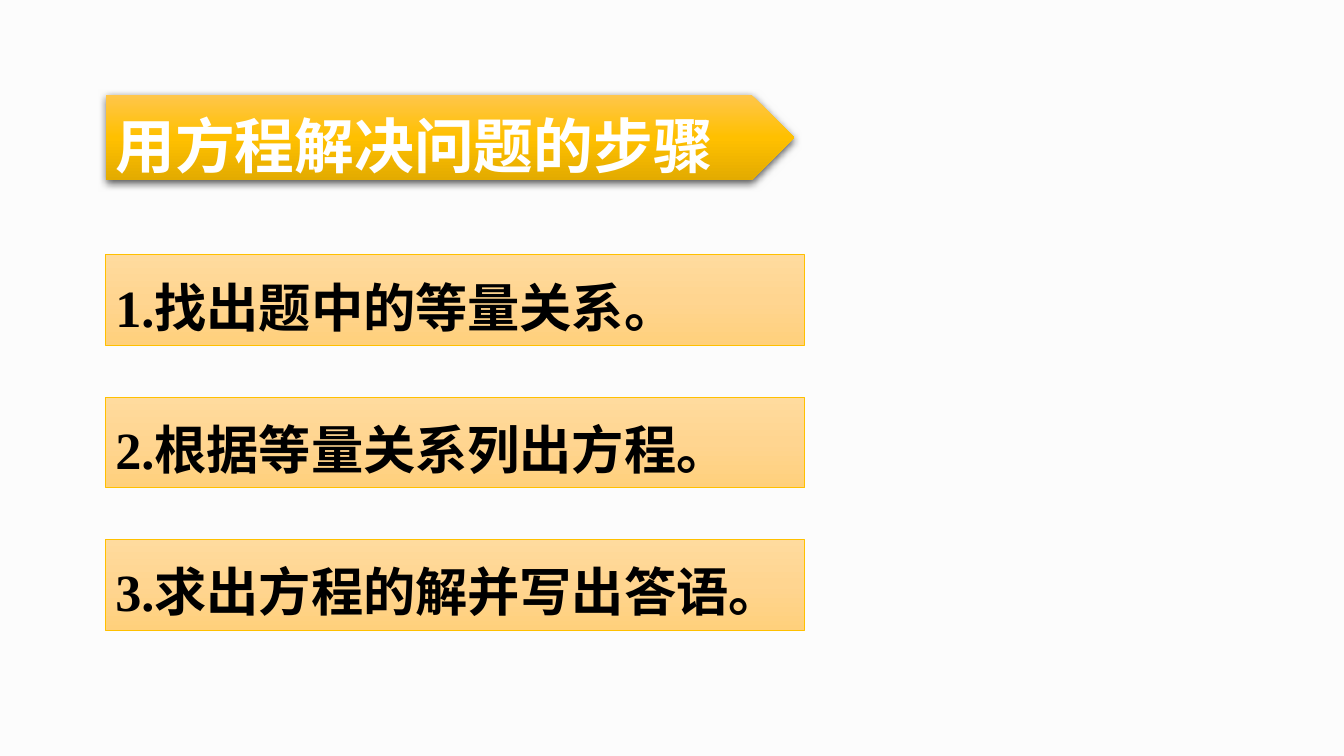
from copy import deepcopy

from lxml.etree import SubElement
from pptx import Presentation
from pptx.dml.color import RGBColor
from pptx.enum.shapes import MSO_SHAPE
from pptx.enum.text import MSO_ANCHOR, PP_ALIGN
from pptx.oxml.ns import qn
from pptx.util import Cm, Pt

COLORS = {
    "page": "FCFCFC",
    "banner": ("FFC64B", "FFC000", "E3AB00"),
    "step": ("FFDB9E", "FFD590", "FFD07C"),
    "edge": "FFC000",
    "title": "FFFFFF",
    "ink": "000000",
    "shadow": "000000",
}
CHINESE_FONT = "Noto Sans CJK SC"
FRAME = {
    "margin_left": Cm(0.18),
    "margin_right": Cm(0.18),
    "margin_top": Cm(0.1),
    "margin_bottom": Cm(0.1),
    "vertical_anchor": MSO_ANCHOR.MIDDLE,
    "word_wrap": True,
}
PARAGRAPH = {"alignment": PP_ALIGN.LEFT, "line_spacing": 1.2}
STEPS = (
    "1.找出题中的等量关系。",
    "2.根据等量关系列出方程。",
    "3.求出方程的解并写出答语。",
)


def apply(target, values):
    for name, value in values.items():
        setattr(target, name, value)


class StepsSlide:
    """Style and current slide for a banner with numbered steps."""

    def __init__(self, deck):
        self.page = deck.slides.add_slide(deck.slide_layouts[6])
        fill = self.page.background.fill
        fill.solid()
        fill.fore_color.rgb = RGBColor.from_string(COLORS["page"])

    def shape(self, kind, left, top, width, height, gradient):
        box = self.page.shapes.add_shape(kind, Cm(left), Cm(top), Cm(width), Cm(height))
        box.shadow.inherit = False
        box.line.fill.background()
        box.fill.gradient()
        box.fill.gradient_angle = 270
        stops = box._element.spPr.find(qn("a:gradFill")).find(qn("a:gsLst"))
        stops.insert(1, deepcopy(stops[0]))
        for stop, position, color in zip(box.fill.gradient_stops, (0, 0.5, 1), gradient):
            stop.position = position
            stop.color.rgb = RGBColor.from_string(color)
        return box

    def text(self, box, words, size, font, color):
        apply(box.text_frame, FRAME)
        para = box.text_frame.paragraphs[0]
        apply(para, PARAGRAPH)
        span = para.add_run()
        span.text = words
        apply(span.font, {"name": font, "size": Pt(size), "bold": True})
        span.font.color.rgb = RGBColor.from_string(color)
        SubElement(span.font._element, qn("a:ea"), typeface=CHINESE_FONT)

    def shadow(self, box):
        effects = box._element.spPr.find(qn("a:effectLst"))
        shade = SubElement(effects, qn("a:outerShdw"), blurRad=str(Pt(4.5)),
                           dist=str(Pt(1.5)), dir="5400000", rotWithShape="0")
        color = SubElement(shade, qn("a:srgbClr"), val=COLORS["shadow"])
        SubElement(color, qn("a:alpha"), val="63000")

    def banner(self, words):
        box = self.shape(MSO_SHAPE.PENTAGON, 2, 1.79, 13.01, 1.62, COLORS["banner"])
        self.shadow(box)
        self.text(box, words, 32, CHINESE_FONT, COLORS["title"])

    def step(self, top, words):
        box = self.shape(MSO_SHAPE.RECTANGLE, 2, top, 13.21, 1.71, COLORS["step"])
        box.line.color.rgb = RGBColor.from_string(COLORS["edge"])
        box.line.width = Pt(0.5)
        self.text(box, words, 28, "Times New Roman", COLORS["ink"])


def main():
    deck = Presentation()
    deck.slide_width, deck.slide_height = Cm(25.4), Cm(14.29)
    slide = StepsSlide(deck)
    slide.banner("用方程解决问题的步骤")
    for index, words in enumerate(STEPS):
        slide.step(4.82 + index * 2.69, words)
    deck.save("out.pptx")


if __name__ == "__main__":
    main()
